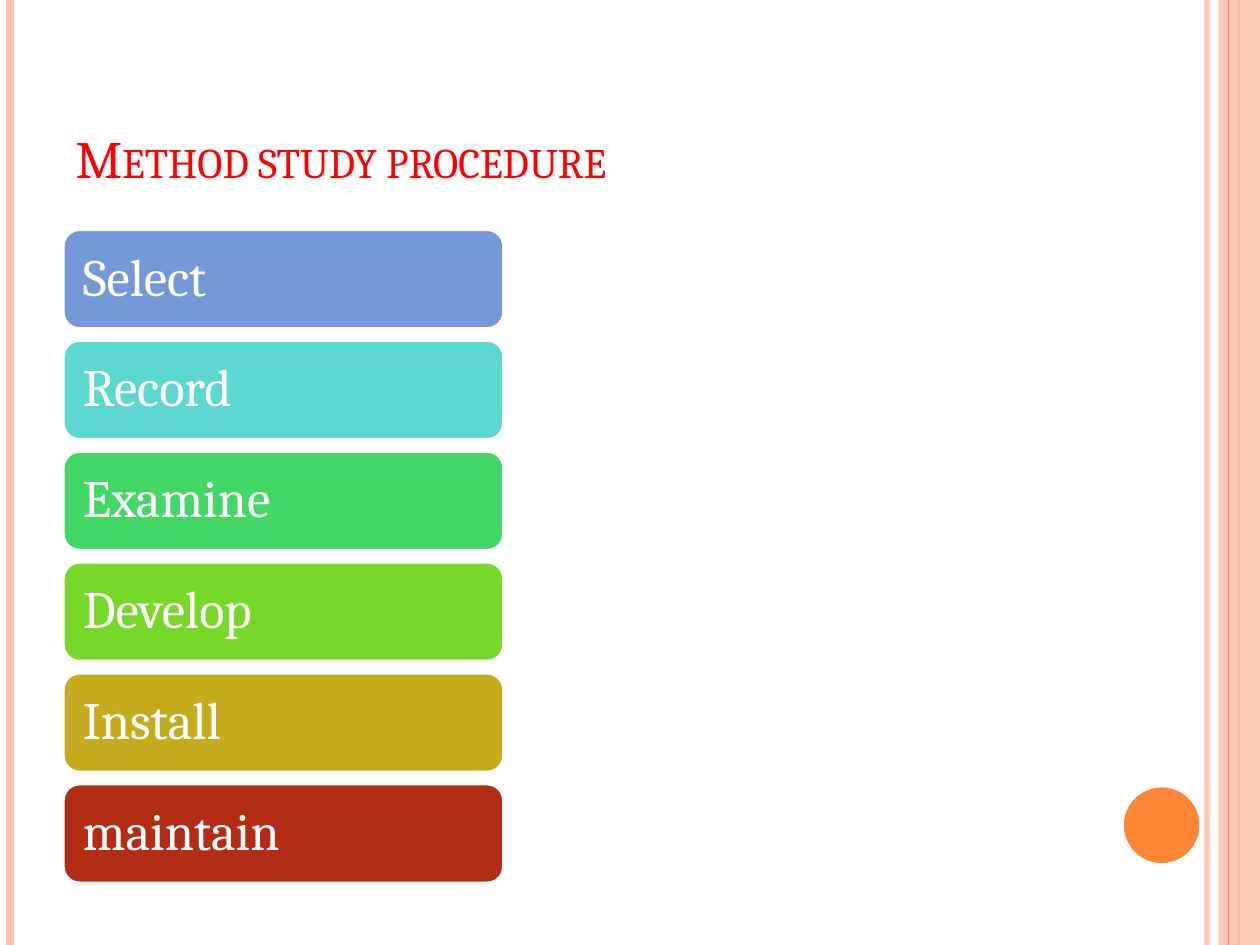
from lxml import etree
from pptx import Presentation
from pptx import util as u
from pptx.dml.color import RGBColor
from pptx.enum import shapes, text
from pptx.oxml import ns

RED = RGBColor(0xFF, 0x00, 0x00)
WHITE = RGBColor(0xFF, 0xFF, 0xFF)
PEACH = RGBColor(0xFE, 0xC3, 0xAE)
ORANGE = RGBColor(0xFE, 0x86, 0x37)

STEPS = [
    ("Select", RGBColor(0x75, 0x98, 0xD9)),
    ("Record", RGBColor(0x5C, 0xD8, 0xD1)),
    ("Examine", RGBColor(0x42, 0xD7, 0x66)),
    ("Develop", RGBColor(0x77, 0xD8, 0x27)),
    ("Install", RGBColor(0xC6, 0xAB, 0x1E)),
    ("maintain", RGBColor(0xB3, 0x2C, 0x16)),
]


def write(frame, words, *, color, size=30, font="Cambria", anchor=text.MSO_ANCHOR.MIDDLE,
          inset=None, spacing=None, small_caps=False):
    frame.word_wrap = True
    frame.auto_size = text.MSO_AUTO_SIZE.NONE
    frame.vertical_anchor = anchor
    if inset is not None:
        frame.margin_left = frame.margin_right = u.Inches(inset)
        frame.margin_top = frame.margin_bottom = u.Inches(inset)
    para = frame.paragraphs[0]
    para.alignment = text.PP_ALIGN.LEFT
    if spacing:
        para.line_spacing = spacing
    span = para.add_run()
    span.text = words
    span.font.name = font
    span.font.size = u.Pt(size)
    span.font.color.rgb = color
    if small_caps:
        span.font._element.set("cap", "small")


def set_opacity(element, percent):
    color = element.find(".//" + ns.qn("a:srgbClr"))
    etree.SubElement(color, ns.qn("a:alpha"), val=str(percent * 1000))


class SlideBuilder:
    height = 7.5

    def __init__(self, page):
        self.page = page

    def title(self, words, left, top, width, height):
        box = self.page.shapes.title
        box.left, box.top = u.Inches(left), u.Inches(top)
        box.width, box.height = u.Inches(width), u.Inches(height)
        write(box.text_frame, words, color=RED, anchor=text.MSO_ANCHOR.BOTTOM, small_caps=True)

    def stripe(self, x, color, weight, opacity=None):
        line = self.page.shapes.add_connector(
            shapes.MSO_CONNECTOR.STRAIGHT, u.Inches(x), 0, u.Inches(x), u.Inches(self.height))
        line.line.color.rgb = color
        line.line.width = u.Pt(weight)
        properties = line._element.spPr
        if opacity:
            set_opacity(properties, opacity)
        etree.SubElement(properties, ns.qn("a:effectLst"))

    def shape(self, kind, left, top, width, height, fill, outline=None, opacity=None):
        box = self.page.shapes.add_shape(
            kind, u.Inches(left), u.Inches(top), u.Inches(width), u.Inches(height))
        box.shadow.inherit = False
        box.fill.solid()
        box.fill.fore_color.rgb = fill
        if opacity:
            set_opacity(box._element.spPr, opacity)
        if outline is None:
            box.line.fill.background()
        else:
            box.line.color.rgb = outline
            box.line.width = u.Pt(2)
        return box

    def step(self, words, fill, top):
        box = self.shape(shapes.MSO_SHAPE.ROUNDED_RECTANGLE, 0.5, top, 3.5, 0.79, fill, WHITE)
        write(box.text_frame, words, color=WHITE, inset=0.12, spacing=0.9)


def main():
    deck = Presentation()
    deck.slide_width, deck.slide_height = u.Inches(10), u.Inches(7.5)
    builder = SlideBuilder(deck.slides.add_slide(deck.slide_layouts[5]))

    # Side stripes and the round badge
    builder.stripe(9.58, PEACH, 3, opacity=93)
    builder.stripe(0.08, PEACH, 4.5)
    builder.stripe(9.83, ORANGE, 1.5)
    builder.shape(shapes.MSO_SHAPE.RECTANGLE, 9.67, 0, 0.33, 7.5, PEACH, opacity=87)
    builder.stripe(9.75, ORANGE, 0.75)
    builder.shape(shapes.MSO_SHAPE.OVAL, 8.92, 6.25, 0.6, 0.6, ORANGE)

    # Title
    builder.title("Method study procedure", 0.5, 0.3, 8.17, 1.25)

    # Procedure steps, evenly stacked
    for index, (words, fill) in enumerate(STEPS):
        builder.step(words, fill, top=1.82 + 0.88 * index)

    deck.save("out.pptx")


if __name__ == "__main__":
    main()
